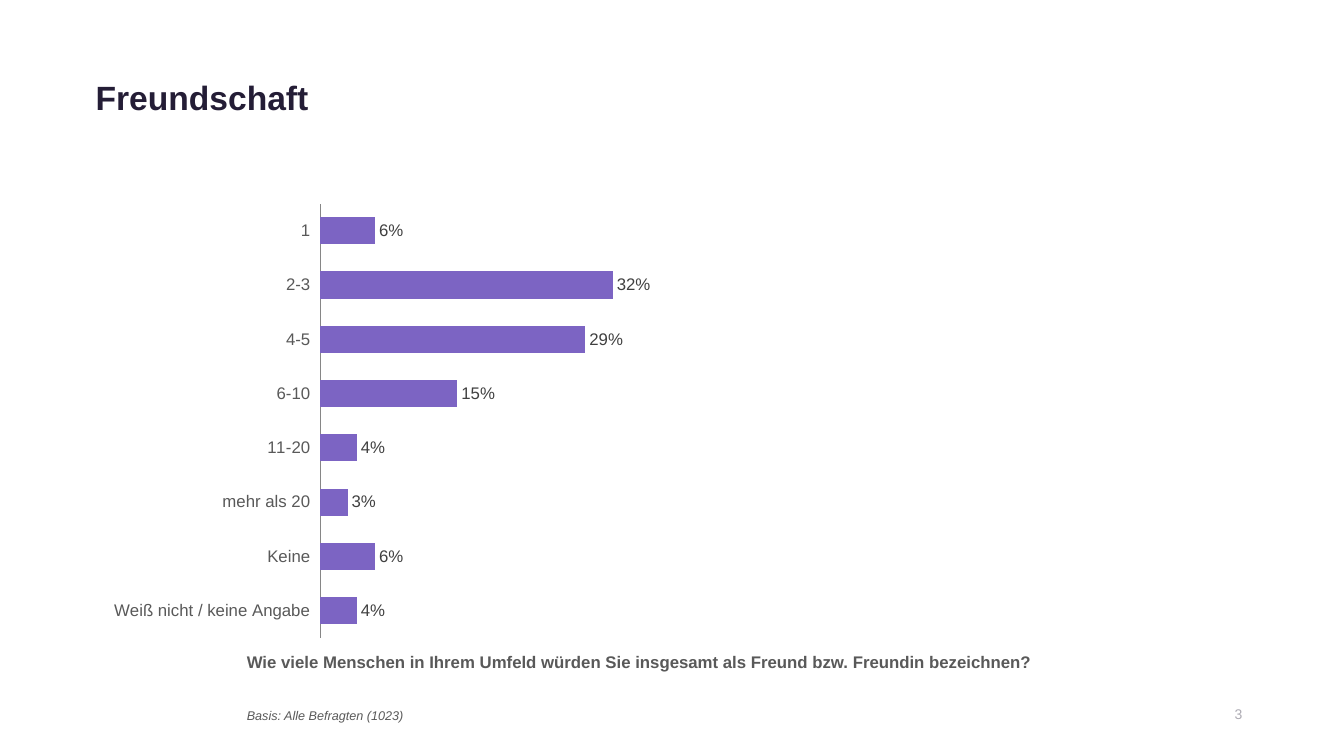
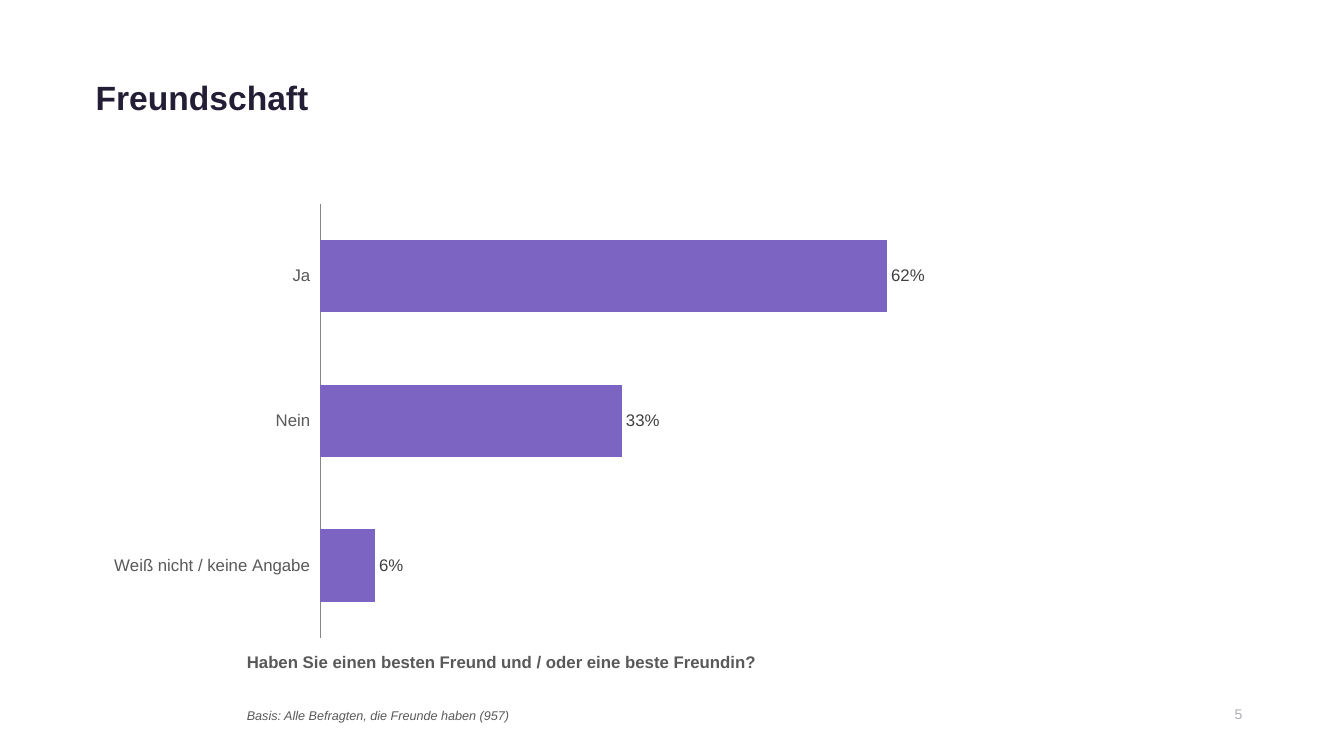
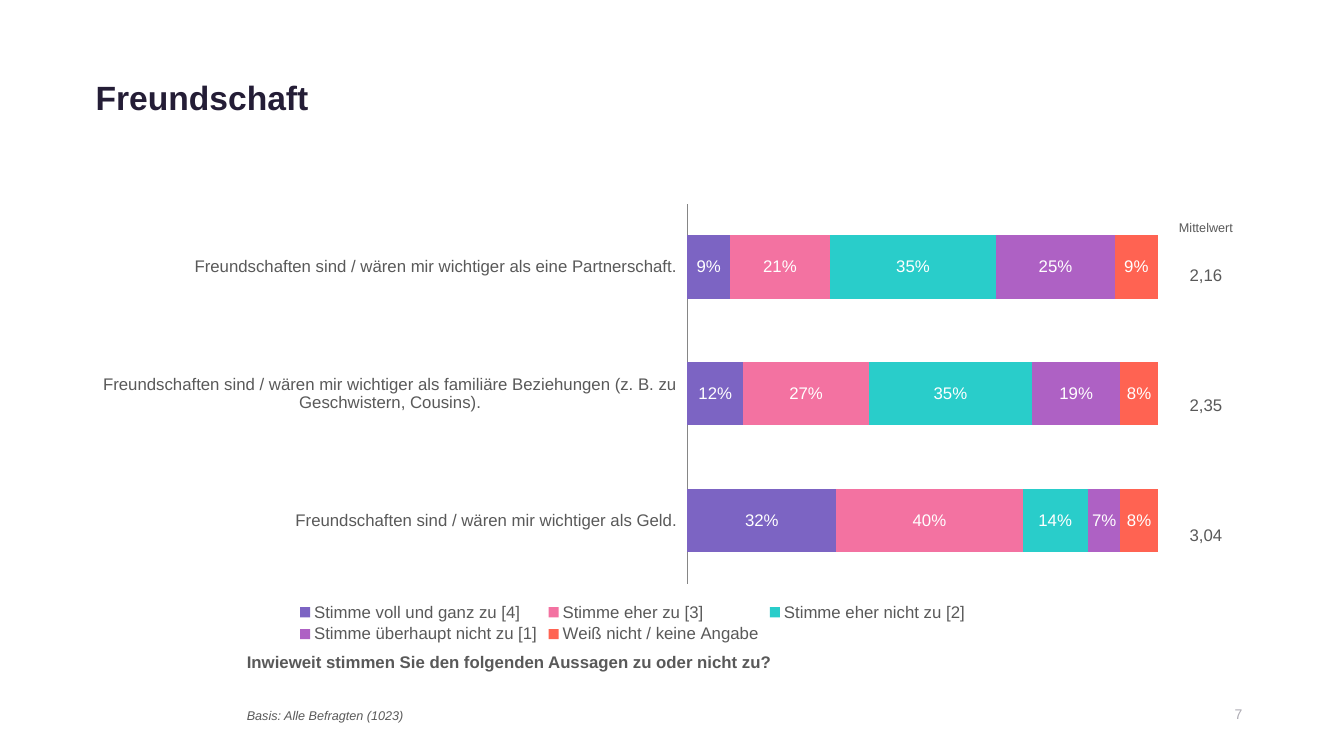
from lxml import etree
from pptx import Presentation
from pptx.chart.data import CategoryChartData
from pptx.dml.color import RGBColor
from pptx.enum.chart import (XL_CHART_TYPE, XL_LABEL_POSITION,
                             XL_LEGEND_POSITION, XL_TICK_LABEL_POSITION,
                             XL_TICK_MARK)
from pptx.enum.text import MSO_ANCHOR, PP_ALIGN
from pptx.oxml.ns import qn
from pptx.util import Inches, Pt

CLUSTERED = XL_CHART_TYPE.BAR_CLUSTERED
STACKED = XL_CHART_TYPE.BAR_STACKED_100
LABEL_CENTER = XL_LABEL_POSITION.CENTER
LABEL_OUTSIDE = XL_LABEL_POSITION.OUTSIDE_END
LEGEND_BOTTOM = XL_LEGEND_POSITION.BOTTOM
TICK_LABELS_LOW = XL_TICK_LABEL_POSITION.LOW
NO_TICKS = XL_TICK_MARK.NONE
LEFT, CENTER, RIGHT = PP_ALIGN.LEFT, PP_ALIGN.CENTER, PP_ALIGN.RIGHT
TOP, MIDDLE = MSO_ANCHOR.TOP, MSO_ANCHOR.MIDDLE

WHITE = "FFFFFF"
GREY = "595959"
AXIS_GREY = "868686"
SERIES_COLORS = ["7C64C3", "F372A1", "29CDCA", "AE61C4", "FF6352"]

TITLE = {"size": 24, "color": "241D36", "bold": True}
QUESTION = {"size": 12, "color": GREY, "bold": True}
BASIS = {"size": 9, "color": GREY, "italic": True}
PAGE_NUMBER = {"size": 10, "color": "ADABB3"}
BODY = {"size": 12, "color": GREY}
SMALL = {"size": 9, "color": GREY}
OUTSIDE_LABEL = {"size": 12, "color": "404040"}
INSIDE_LABEL = {"size": 12, "color": WHITE}

CONTENT_LEFT, CONTENT_WIDTH = 0.85, 11.63
CHART_TOP, CHART_HEIGHT = 1.93, 4.49
# Plot areas as fractions of the chart: left, top, width, height
SIMPLE_PLOT = {"x": 0.2, "y": 0.02, "w": 0.78, "h": 0.96}
STACKED_PLOT = {"x": 0.55, "y": 0.02, "w": 0.43, "h": 0.84}

NO_ANSWER = "Weiß nicht / keine Angabe"
FRIEND_COUNTS = {"1": 0.06, "2-3": 0.32, "4-5": 0.29, "6-10": 0.15,
                 "11-20": 0.04, "mehr als 20": 0.03, "Keine": 0.06,
                 NO_ANSWER: 0.04}
BEST_FRIEND = {"Ja": 0.62, "Nein": 0.33, NO_ANSWER: 0.06}
STATEMENTS = [
    "Freundschaften sind / wären mir wichtiger als eine Partnerschaft.",
    "Freundschaften sind / wären mir wichtiger als familiäre Beziehungen "
    "(z. B. zu Geschwistern, Cousins).",
    "Freundschaften sind / wären mir wichtiger als Geld.",
]
AGREEMENT = {
    "Stimme voll und ganz zu [4]": [0.09, 0.12, 0.32],
    "Stimme eher zu [3]": [0.21, 0.27, 0.4],
    "Stimme eher nicht zu [2]": [0.35, 0.35, 0.14],
    "Stimme überhaupt nicht zu [1]": [0.25, 0.19, 0.07],
    NO_ANSWER: [0.09, 0.08, 0.08],
}
MEANS = ["2,16", "2,35", "3,04"]


def rgb(color):
    return RGBColor.from_string(color)


def format_font(font, values):
    font.name = "Arial"
    for name, value in values.items():
        if name == "color":
            font.color.rgb = rgb(value)
        else:
            setattr(font, name, Pt(value) if name == "size" else value)


def write(frame, text, values, align=LEFT):
    paragraph = frame.paragraphs[0]
    paragraph.alignment = align
    run = paragraph.add_run()
    run.text = text
    format_font(run.font, values)


def add_text(slide, box, text, values, align=LEFT, anchor=TOP):
    shape = slide.shapes.add_textbox(*map(Inches, box))
    frame = shape.text_frame
    frame.word_wrap = True
    frame.vertical_anchor = anchor
    write(frame, text, values, align)


def add_survey_slide(presentation, number, question, basis):
    """Add a slide with the title, question, basis and page number."""
    slide = presentation.slides.add_slide(presentation.slide_layouts[6])
    add_text(slide, (11.78, 6.95, 0.64, 0.27), str(number), PAGE_NUMBER, RIGHT)
    add_text(slide, (CONTENT_LEFT, 0.71, CONTENT_WIDTH, 0.5), "Freundschaft",
             TITLE, anchor=MIDDLE)
    add_text(slide, (2.35, 6.42, 9.33, 0.47), question, QUESTION)
    add_text(slide, (2.35, 6.97, 9.33, 0.27), basis, BASIS)
    return slide


def set_plot_layout(chart, fractions):
    """Fix the inner plot area, so that the axis stays in place."""
    plot_area = chart._chartSpace.find(".//" + qn("c:plotArea"))
    for old_layout in plot_area.findall(qn("c:layout")):
        plot_area.remove(old_layout)
    layout = etree.Element(qn("c:layout"))
    manual = etree.SubElement(layout, qn("c:manualLayout"))
    settings = {"layoutTarget": "inner", "xMode": "edge", "yMode": "edge",
                **fractions}
    for name, value in settings.items():
        etree.SubElement(manual, qn("c:" + name)).set("val", str(value))
    plot_area.insert(0, layout)


def format_axes(chart):
    category_axis = chart.category_axis
    category_axis.reverse_order = True
    category_axis.tick_label_position = TICK_LABELS_LOW
    category_axis.major_tick_mark = NO_TICKS
    category_axis.has_major_gridlines = False
    category_axis.format.line.color.rgb = rgb(AXIS_GREY)
    category_axis.format.line.width = Pt(0.75)
    format_font(category_axis.tick_labels.font, BODY)
    value_axis = chart.value_axis
    settings = {"visible": False, "has_major_gridlines": False,
                "minimum_scale": 0, "maximum_scale": 1, "major_unit": 0.1}
    for name, value in settings.items():
        setattr(value_axis, name, value)


def add_bar_chart(slide, kind, categories, series_values, width, layout,
                  overlap, label_values, label_position):
    data = CategoryChartData(number_format="0%")
    data.categories = categories
    for name, values in series_values.items():
        data.add_series(name, values)
    box = (CONTENT_LEFT, CHART_TOP, width, CHART_HEIGHT)
    chart = slide.shapes.add_chart(kind, *map(Inches, box), data).chart
    chart.has_title = False
    chart.has_legend = False
    format_font(chart.font, BODY)
    format_axes(chart)
    set_plot_layout(chart, layout)
    plot = chart.plots[0]
    plot.vary_by_categories = False
    plot.gap_width = 100
    plot.overlap = overlap
    for series, color in zip(plot.series, SERIES_COLORS):
        series.format.fill.solid()
        series.format.fill.fore_color.rgb = rgb(color)
        labels = series.data_labels
        labels.show_value = True
        labels.number_format = "0%"
        labels.number_format_is_linked = False
        labels.position = label_position
        format_font(labels.font, label_values)
    return chart


def add_simple_chart(slide, shares):
    add_bar_chart(slide, CLUSTERED, list(shares),
                  {"Series 1": list(shares.values())}, CONTENT_WIDTH,
                  SIMPLE_PLOT, -10, OUTSIDE_LABEL, LABEL_OUTSIDE)


def add_agreement_chart(slide):
    chart = add_bar_chart(slide, STACKED, STATEMENTS, AGREEMENT, 10.85,
                          STACKED_PLOT, 100, INSIDE_LABEL, LABEL_CENTER)
    chart.has_legend = True
    chart.legend.position = LEGEND_BOTTOM
    chart.legend.include_in_layout = False
    format_font(chart.legend.font, BODY)


def add_means_table(slide):
    heights = [0.67] + [1.29] * len(MEANS)
    box = (11.57, CHART_TOP, 0.78, sum(heights))
    table = slide.shapes.add_table(len(heights), 1, *map(Inches, box)).table
    table.first_row = table.horz_banding = False
    for index, text in enumerate(["Mittelwert"] + MEANS):
        table.rows[index].height = Inches(heights[index])
        cell = table.cell(index, 0)
        cell.fill.solid()
        cell.fill.fore_color.rgb = rgb(WHITE)
        for side in ("left", "top", "right", "bottom"):
            setattr(cell, "margin_" + side, Inches(0.04))
        cell.vertical_anchor = TOP if index else MIDDLE
        write(cell.text_frame, text, BODY if index else SMALL, CENTER)


def main():
    presentation = Presentation()
    presentation.slide_width = Inches(13.33)
    presentation.slide_height = Inches(7.5)

    slide = add_survey_slide(
        presentation, 3,
        "Wie viele Menschen in Ihrem Umfeld würden Sie insgesamt als Freund "
        "bzw. Freundin bezeichnen?",
        "Basis: Alle Befragten (1023)")
    add_simple_chart(slide, FRIEND_COUNTS)

    slide = add_survey_slide(
        presentation, 5,
        "Haben Sie einen besten Freund und / oder eine beste Freundin?",
        "Basis: Alle Befragten, die Freunde haben (957)")
    add_simple_chart(slide, BEST_FRIEND)

    slide = add_survey_slide(
        presentation, 7,
        "Inwieweit stimmen Sie den folgenden Aussagen zu oder nicht zu?",
        "Basis: Alle Befragten (1023)")
    add_means_table(slide)
    add_agreement_chart(slide)

    presentation.save("out.pptx")


if __name__ == "__main__":
    main()
